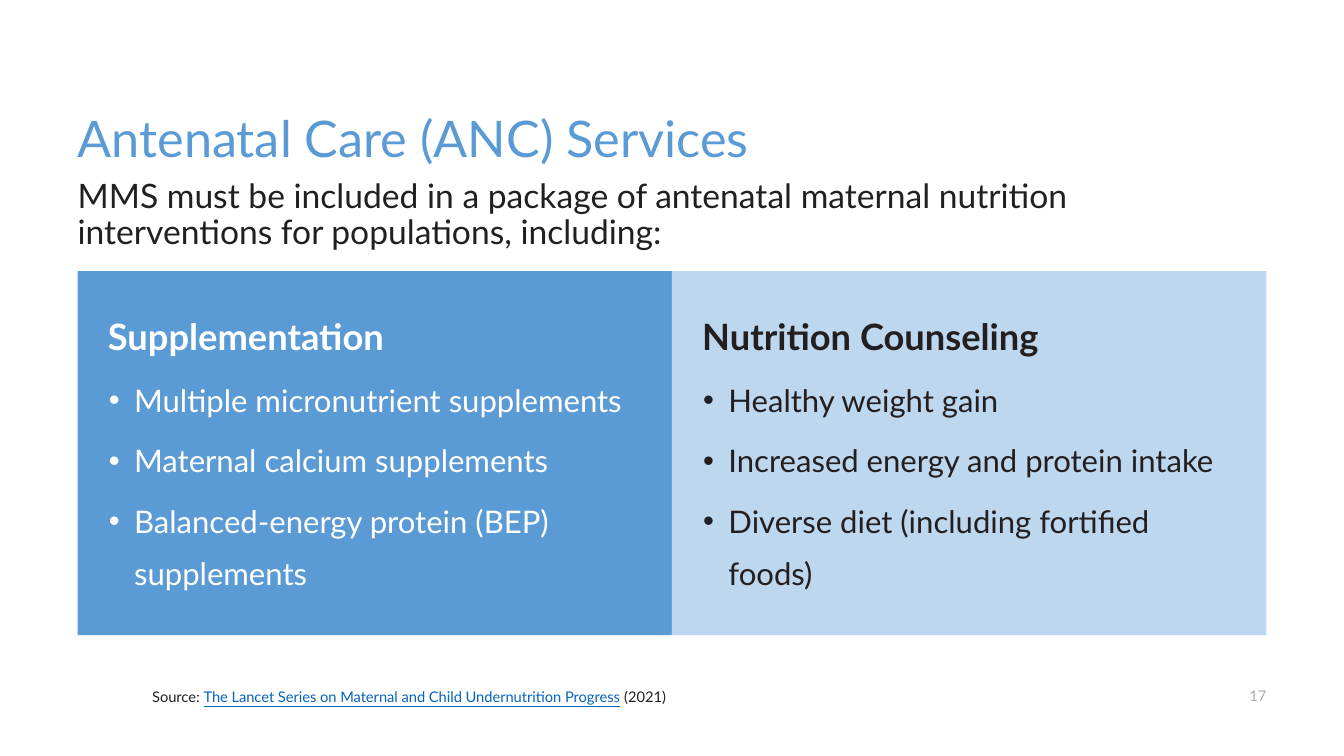
"""Build the slide on antenatal care services."""
from lxml import etree
from pptx import Presentation
from pptx.dml.color import RGBColor
from pptx.enum.shapes import MSO_SHAPE
from pptx.enum.text import MSO_ANCHOR, PP_ALIGN
from pptx.oxml.ns import qn
from pptx.util import Inches, Pt

RECTANGLE = MSO_SHAPE.RECTANGLE
TOP, MIDDLE, BOTTOM = MSO_ANCHOR.TOP, MSO_ANCHOR.MIDDLE, MSO_ANCHOR.BOTTOM
LEFT, RIGHT = PP_ALIGN.LEFT, PP_ALIGN.RIGHT

WIDTH, HEIGHT = 13.33, 7.5
MARGIN = 0.77
CONTENT = WIDTH - 2 * MARGIN
COLUMN = CONTENT / 2
PANEL_TOP, PANEL_HEIGHT, PANEL_INSET = 2.69, 3.61, 0.3
FOOTER_TOP, FOOTER_HEIGHT = 6.7, 0.4

FONT = "Lato"
BLUE, PALE_BLUE, LINK_BLUE = "5B9BD5", "BDD7EE", "0563C1"
INK, WHITE, GRAY = "231F20", "FFFFFF", "AFABAB"

PANELS = [
    ("Supplementation", BLUE, WHITE, [
        "Multiple micronutrient supplements",
        "Maternal calcium supplements",
        "Balanced-energy protein (BEP) supplements",
    ]),
    ("Nutrition Counseling", PALE_BLUE, INK, [
        "Healthy weight gain",
        "Increased energy and protein intake",
        "Diverse diet (including fortified foods)",
    ]),
]


def rgb(value):
    """Turn a hex string into a colour."""
    return RGBColor.from_string(value)


def set_frame(shape, anchor, inset=0):
    """Wrap the text of a shape, anchor it and set equal insets."""
    frame = shape.text_frame
    frame.word_wrap = True
    frame.vertical_anchor = anchor
    frame.margin_left = frame.margin_right = Inches(inset)
    frame.margin_top = frame.margin_bottom = Inches(inset)
    return frame


def text_area(slide, left, top, width, height, anchor):
    """Add a text box without insets and return its frame."""
    box = slide.shapes.add_textbox(*map(Inches, (left, top, width, height)))
    return set_frame(box, anchor)


def add_run(paragraph, text, size, color, bold=False, underline=False):
    """Add a formatted run to a paragraph."""
    run = paragraph.add_run()
    run.text = text
    font = run.font
    font.name, font.size, font.bold = FONT, Pt(size), bold
    font.underline = underline
    font.color.rgb = rgb(color)


def write(paragraph, text, size=24, color=INK, bold=False, align=LEFT,
          spacing=1.0, before=0):
    """Write text into a paragraph with the given format."""
    paragraph.alignment = align
    paragraph.line_spacing = spacing
    paragraph.space_before = Pt(before)
    add_run(paragraph, text, size, color, bold)


def add_bullet(paragraph):
    """Give a paragraph a hanging bullet."""
    properties = paragraph._p.get_or_add_pPr()
    properties.set("marL", str(Inches(0.26)))
    properties.set("indent", str(Inches(-0.25)))
    etree.SubElement(properties, qn("a:buFont"), typeface="Arial")
    etree.SubElement(properties, qn("a:buChar"), char="•")


def add_panel(slide, column, heading, fill, color, items):
    """Add a filled panel with a heading and bulleted items."""
    panel = slide.shapes.add_shape(
        RECTANGLE, Inches(MARGIN + column * COLUMN), Inches(PANEL_TOP),
        Inches(COLUMN), Inches(PANEL_HEIGHT))
    panel.shadow.inherit = False
    panel.fill.solid()
    panel.fill.fore_color.rgb = rgb(fill)
    panel.line.fill.background()
    frame = set_frame(panel, MIDDLE, PANEL_INSET)
    write(frame.paragraphs[0], heading, size=25.9, color=color, bold=True)
    for item in items:
        paragraph = frame.add_paragraph()
        add_bullet(paragraph)
        write(paragraph, item, size=22.2, color=color, spacing=1.4, before=6)


def add_source(slide):
    """Add the source line with its underlined title."""
    frame = text_area(slide, 1.51, FOOTER_TOP, 6.46, FOOTER_HEIGHT, MIDDLE)
    citation = frame.paragraphs[0]
    write(citation, "Source: ", size=10.5, spacing=1.1)
    add_run(citation,
            "The Lancet Series on Maternal and Child Undernutrition Progress",
            10.5, LINK_BLUE, underline=True)
    add_run(citation, " (2021)", 10.5, INK)


def main():
    """Build and save the slide."""
    deck = Presentation()
    deck.slide_width, deck.slide_height = Inches(WIDTH), Inches(HEIGHT)
    slide = deck.slides.add_slide(deck.slide_layouts[6])

    title = text_area(slide, MARGIN, 0.32, CONTENT, 1.35, BOTTOM)
    write(title.paragraphs[0], "Antenatal Care (ANC) Services",
          size=36, color=BLUE, spacing=0.9)
    intro = text_area(slide, MARGIN, 1.78, CONTENT, 0.79, TOP)
    write(intro.paragraphs[0],
          "MMS must be included in a package of antenatal maternal nutrition "
          "interventions for populations, including:", spacing=0.9)

    for column, panel in enumerate(PANELS):
        add_panel(slide, column, *panel)

    add_source(slide)
    number = text_area(slide, 12.22, FOOTER_TOP, 0.34, FOOTER_HEIGHT, MIDDLE)
    write(number.paragraphs[0], "17", size=10.5, color=GRAY, align=RIGHT)
    deck.save("out.pptx")


if __name__ == "__main__":
    main()
